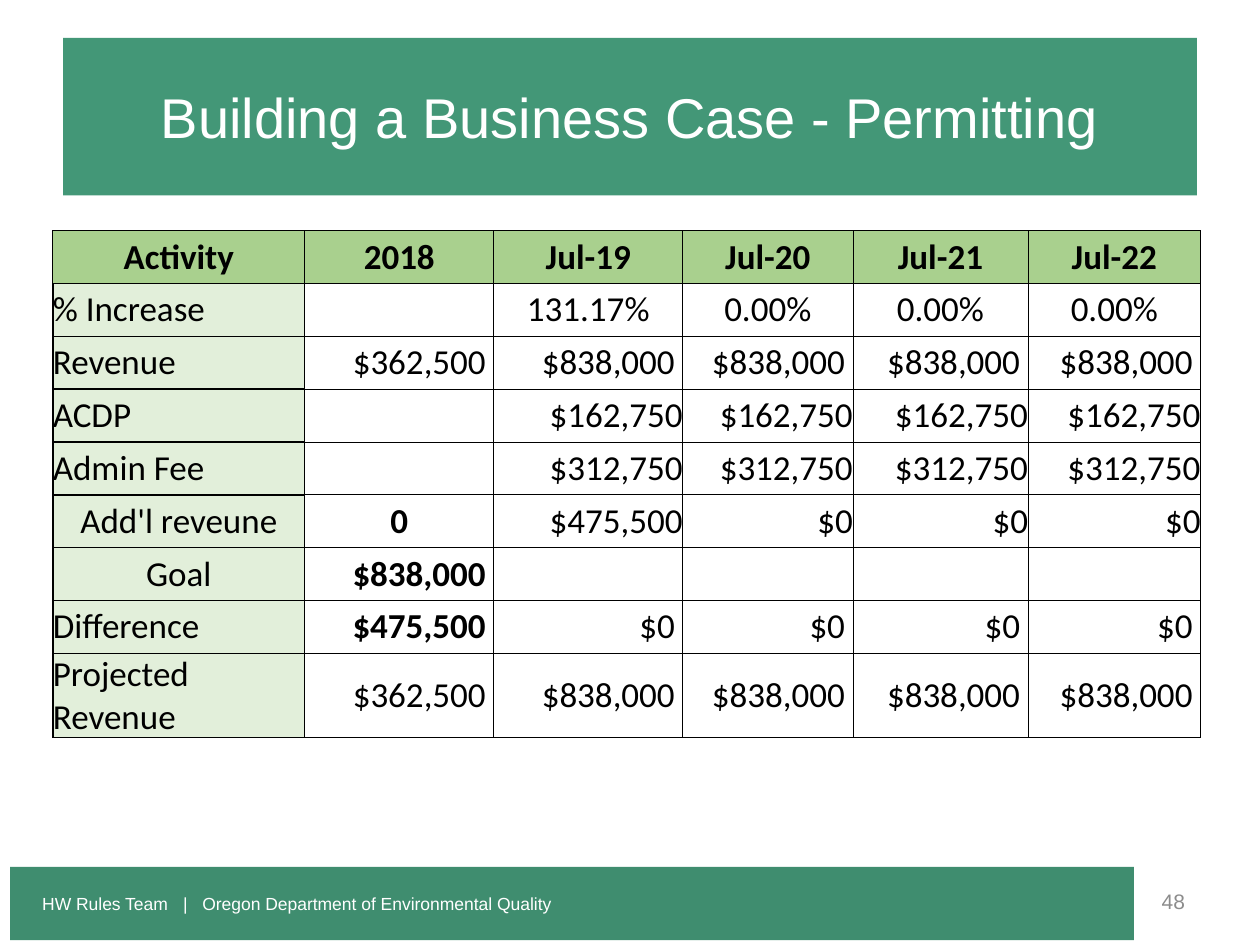
import dataclasses

import pptx
import pptx.dml.color
import pptx.enum.shapes
import pptx.enum.text
import pptx.oxml
import pptx.oxml.ns
import pptx.util

Pt = pptx.util.Pt
ALIGN = pptx.enum.text.PP_ALIGN
MIDDLE = pptx.enum.text.MSO_ANCHOR.MIDDLE


@dataclasses.dataclass(frozen=True)
class Theme:
    banner: str = "439777"
    bar: str = "3F8D6F"
    head: str = "A9D08E"
    label: str = "E2EFDA"
    ink: str = "000000"
    light: str = "FFFFFF"
    muted: str = "8C8C8C"
    sans: str = "Arial"
    body: str = "Calibri"
    title: int = 32
    cell: int = 20
    page: int = 12
    note: int = 10


THEME = Theme()
WIDTHS = (144, 108, 108, 97.2, 100.1, 98.6)
ROW = 30.2
HEADS = ("Activity", "2018", "Jul-19", "Jul-20", "Jul-21", "Jul-22")
L, C, R, J = ALIGN.LEFT, ALIGN.CENTER, ALIGN.RIGHT, ALIGN.JUSTIFY

# label, label alignment, 2018 value, values from 2019 on, their alignment
ROWS = (
    ("% Increase", L, "", ("131.17%",) + ("0.00%",) * 3, C),
    ("Revenue", L, "$362,500 ", ("$838,000 ",) * 4, R),
    ("ACDP", L, "", ("$162,750",) * 4, R),
    ("Admin Fee", J, "", ("$312,750",) * 4, R),
    ("Add'l reveune", C, "0", ("$475,500",) + ("$0",) * 3, R),
    ("Goal", C, "$838,000 ", ("",) * 4, R),
    ("Difference", J, "$475,500 ", ("$0 ",) * 4, R),
    ("Projected Revenue", L, "$362,500 ", ("$838,000 ",) * 4, R),
)
BOLD = {"Add'l reveune", "Goal", "Difference"}


def rgb(code):
    return pptx.dml.color.RGBColor.from_string(code)


def paint(item, code):
    item.fill.solid()
    item.fill.fore_color.rgb = rgb(code)


def write(frame, text, size, color, align, font=THEME.sans, bold=False):
    frame.text = text
    para = frame.paragraphs[0]
    para.alignment = align
    for run in para.runs:
        run.font.name = font
        run.font.size = Pt(size)
        run.font.bold = bold
        run.font.color.rgb = rgb(color)


def add_title(slide, text):
    title = slide.shapes.title
    title.left, title.top = Pt(36), Pt(21.6)
    title.width, title.height = Pt(648), Pt(90)
    paint(title, THEME.banner)
    title.text_frame.vertical_anchor = MIDDLE
    write(title.text_frame, text, THEME.title, THEME.light, C)


def add_bar(slide, text, stops):
    """Draw the footer bar, with its parts set apart by tab stops."""
    kind = pptx.enum.shapes.MSO_SHAPE.RECTANGLE
    bar = slide.shapes.add_shape(kind, Pt(5.8), Pt(495.4), Pt(642.2), Pt(41.8))
    bar.shadow.inherit = False
    bar.line.fill.background()
    paint(bar, THEME.bar)
    frame = bar.text_frame
    frame.margin_left = Pt(18.3)
    frame.vertical_anchor = MIDDLE
    write(frame, text, THEME.note, THEME.light, L)
    tabs = "".join(f'<a:tab pos="{Pt(x)}" algn="l"/>' for x in stops)
    space = pptx.oxml.ns.nsdecls("a")
    props = frame.paragraphs[0]._p.get_or_add_pPr()
    props.append(pptx.oxml.parse_xml(f"<a:tabLst {space}>{tabs}</a:tabLst>"))


def add_page(slide, text):
    box = slide.shapes.add_textbox(Pt(516.2), Pt(500.4), Pt(168), Pt(28.8))
    box.text_frame.word_wrap = True
    box.text_frame.vertical_anchor = MIDDLE
    write(box.text_frame, text, THEME.page, THEME.muted, R)


def edge(cell, left=0.5, right=0.5, top=0.5, bottom=0.5):
    """Give the cell its border lines, with widths in points."""
    props = cell._tc.get_or_add_tcPr()
    sides = {"L": left, "R": right, "T": top, "B": bottom}
    for spot, (side, width) in enumerate(sides.items()):
        props.insert(spot, pptx.oxml.parse_xml(
            f'<a:ln{side} {pptx.oxml.ns.nsdecls("a")} w="{Pt(width)}">'
            f'<a:solidFill><a:srgbClr val="{THEME.ink}"/></a:solidFill>'
            f'</a:ln{side}>'))


def set_cell(cell, text, align, fill=None, bold=False):
    cell.margin_left = cell.margin_right = 0
    cell.margin_top = cell.margin_bottom = 0
    cell.vertical_anchor = MIDDLE
    if fill:
        paint(cell, fill)
    else:
        cell.fill.background()
    write(cell.text_frame, text, THEME.cell, THEME.ink, align, THEME.body, bold)


def add_grid(slide):
    count = len(ROWS) + 1
    frame = slide.shapes.add_table(count, len(WIDTHS), Pt(30.2), Pt(131.8),
                                   Pt(sum(WIDTHS)), Pt(ROW * count))
    table = frame.table
    table.first_row = table.horz_banding = False
    for column, width in zip(table.columns, WIDTHS):
        column.width = Pt(width)
    for row in table.rows:
        row.height = Pt(ROW)
    for col, text in enumerate(HEADS):
        set_cell(table.cell(0, col), text, C, THEME.head, True)
        edge(table.cell(0, col))
    for row, (label, side, base, values, align) in enumerate(ROWS, 1):
        name = table.cell(row, 0)
        set_cell(name, label, side, THEME.label)
        edge(name, left=1, top=0.5 if row == 1 else 1, bottom=1)
        set_cell(table.cell(row, 1), base, C if base == "0" else R,
                 bold=label in BOLD)
        edge(table.cell(row, 1))
        for col, text in enumerate(values, 2):
            set_cell(table.cell(row, col), text, align)
            edge(table.cell(row, col))


def main():
    deck = pptx.Presentation()
    deck.slide_width, deck.slide_height = Pt(720), Pt(540)
    slide = deck.slides.add_slide(deck.slide_layouts[5])
    add_title(slide, "Building a Business Case - Permitting")
    add_bar(slide, "HW Rules Team\t|\tOregon Department of Environmental Quality",
            (80.5, 91.5))
    add_page(slide, "48")
    add_grid(slide)
    deck.save("out.pptx")


if __name__ == "__main__":
    main()
